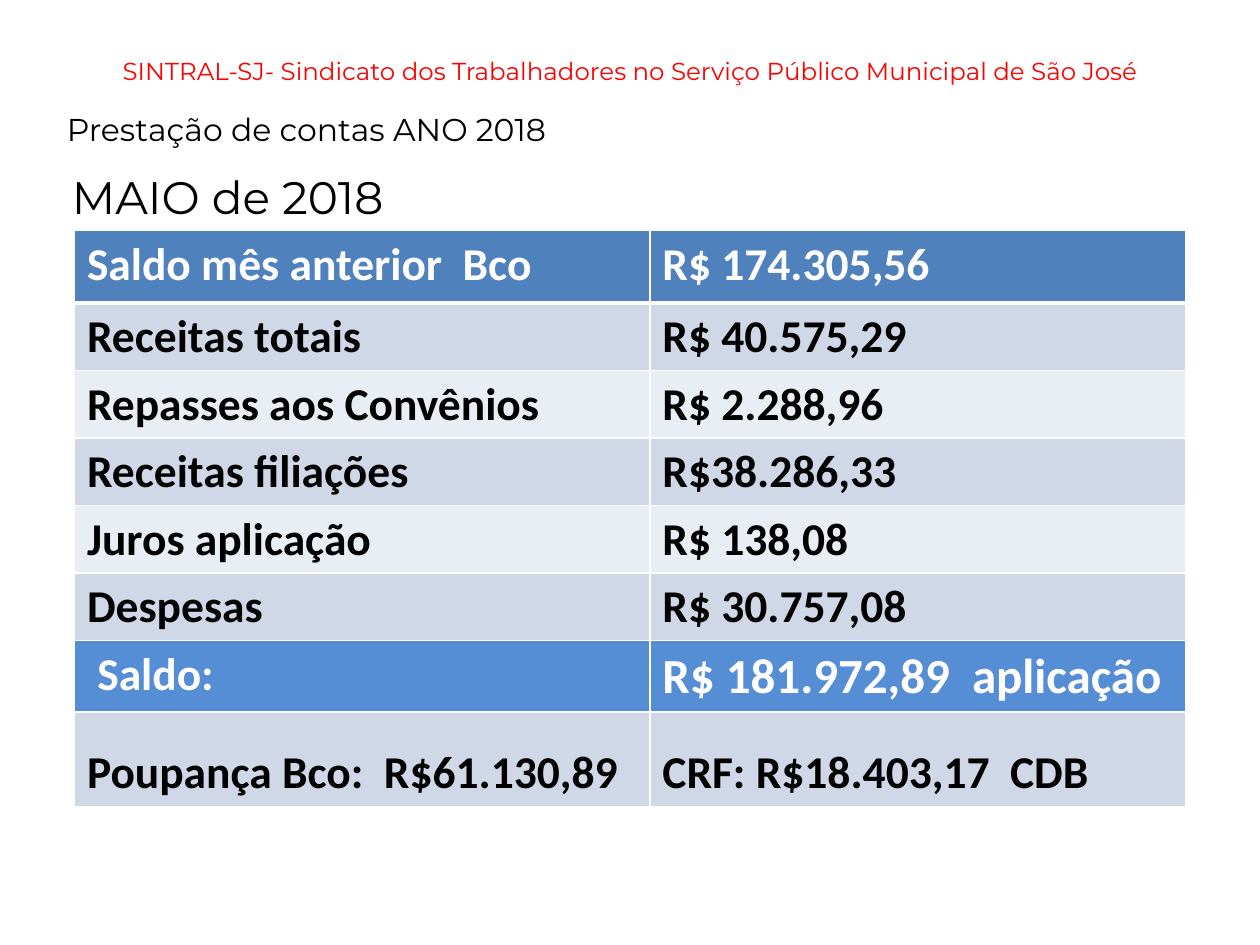
from lxml import etree
from pptx import Presentation
from pptx.dml.color import RGBColor
from pptx.enum.text import MSO_ANCHOR, MSO_AUTO_SIZE, PP_ALIGN
from pptx.oxml.ns import qn
from pptx.util import Cm, Pt

TOP, MID, LOW = MSO_ANCHOR.TOP, MSO_ANCHOR.MIDDLE, MSO_ANCHOR.BOTTOM
NONE = MSO_AUTO_SIZE.NONE
CENTER, LEFT = PP_ALIGN.CENTER, PP_ALIGN.LEFT
HEAD, DARK, PALE, SUM = "4F81BD", "D0D8E8", "E9EDF4", "558ED5"
BLACK, WHITE, RED = "000000", "FFFFFF", "FF0000"

ROWS = [
    ("Saldo mês anterior  Bco", "R$ 174.305,56", HEAD, WHITE, 26, 1.46, TOP),
    ("Receitas totais", "R$ 40.575,29", DARK, BLACK, 26, 1.36, TOP),
    ("Repasses aos Convênios", "R$ 2.288,96", PALE, BLACK, 26, 1.36, TOP),
    ("Receitas filiações", "R$38.286,33", DARK, BLACK, 26, 1.36, TOP),
    ("Juros aplicação", "R$ 138,08", PALE, BLACK, 26, 1.36, TOP),
    ("Despesas", "R$ 30.757,08", DARK, BLACK, 26, 1.36, TOP),
    (" Saldo:", "R$ 181.972,89  aplicação", SUM, WHITE, 28, 1.44, TOP),
    ("Poupança Bco:  R$61.130,89", "CRF: R$18.403,17  CDB", DARK, BLACK, 26, 1.92, LOW),
]


def tint(code):
    """Turn a hex string into a colour."""
    return RGBColor.from_string(code)


def write(frame, text, size, color, font="Montserrat", bold=False, align=LEFT):
    """Add one formatted run to the first paragraph of a frame."""
    para = frame.paragraphs[0]
    para.alignment = align
    run = para.add_run()
    run.text = text
    run.font.size = Pt(size)
    run.font.name = font
    run.font.bold = bold
    run.font.color.rgb = tint(color)


def add_title(slide, text):
    """Place and fill the title placeholder."""
    title = slide.shapes.title
    title.left, title.top = Cm(0.41), Cm(0.33)
    title.width, title.height = Cm(24.6), Cm(2.2)
    frame = title.text_frame
    frame.auto_size = NONE
    frame.vertical_anchor = MID
    write(frame, text, 14, RED, align=CENTER)


def add_label(slide, text, left, top, width, height, size):
    """Add a wrapped text box."""
    box = slide.shapes.add_textbox(Cm(left), Cm(top), Cm(width), Cm(height))
    box.text_frame.word_wrap = True
    write(box.text_frame, text, size, BLACK)


def add_edges(cell, low):
    """Draw white borders, the bottom one with its own width."""
    props = cell._tc.get_or_add_tcPr()
    for side, width in (("L", 1), ("R", 1), ("T", 1), ("B", low)):
        line = etree.SubElement(props, qn(f"a:ln{side}"), w=str(Pt(width)))
        fill = etree.SubElement(line, qn("a:solidFill"))
        etree.SubElement(fill, qn("a:srgbClr"), val=WHITE)


def fill_cell(cell, text, size, color, fill, low, anchor):
    """Format one cell and write its text."""
    add_edges(cell, low)
    cell.fill.solid()
    cell.fill.fore_color.rgb = tint(fill)
    cell.vertical_anchor = anchor
    write(cell.text_frame, text, size, color, "Calibri", True)


def add_grid(slide):
    """Build the table of accounts."""
    high = sum(row[5] for row in ROWS)
    table = slide.shapes.add_table(
        len(ROWS), 2, Cm(1.5), Cm(4.65), Cm(22.4), Cm(high)).table
    table.columns[0].width, table.columns[1].width = Cm(11.6), Cm(10.8)
    for i, (label, value, fill, color, size, tall, anchor) in enumerate(ROWS):
        table.rows[i].height = Cm(tall)
        low = 1 if i else 3
        fill_cell(table.cell(i, 0), label, 26, color, fill, low, anchor)
        fill_cell(table.cell(i, 1), value, size, color, fill, low, anchor)


def main():
    """Build and save the slide."""
    deck = Presentation()
    deck.slide_width, deck.slide_height = Cm(25.4), Cm(19.05)
    slide = deck.slides.add_slide(deck.slide_layouts[5])
    add_title(slide, "SINTRAL-SJ- Sindicato dos Trabalhadores no Serviço "
                     "Público Municipal de São José")
    add_label(slide, "Prestação de contas ANO 2018", 1.1, 2.1, 23.4, 1.02, 18)
    add_grid(slide)
    add_label(slide, "MAIO de 2018", 1.2, 3.28, 16.6, 1.37, 26)
    deck.save("out.pptx")


if __name__ == "__main__":
    main()
